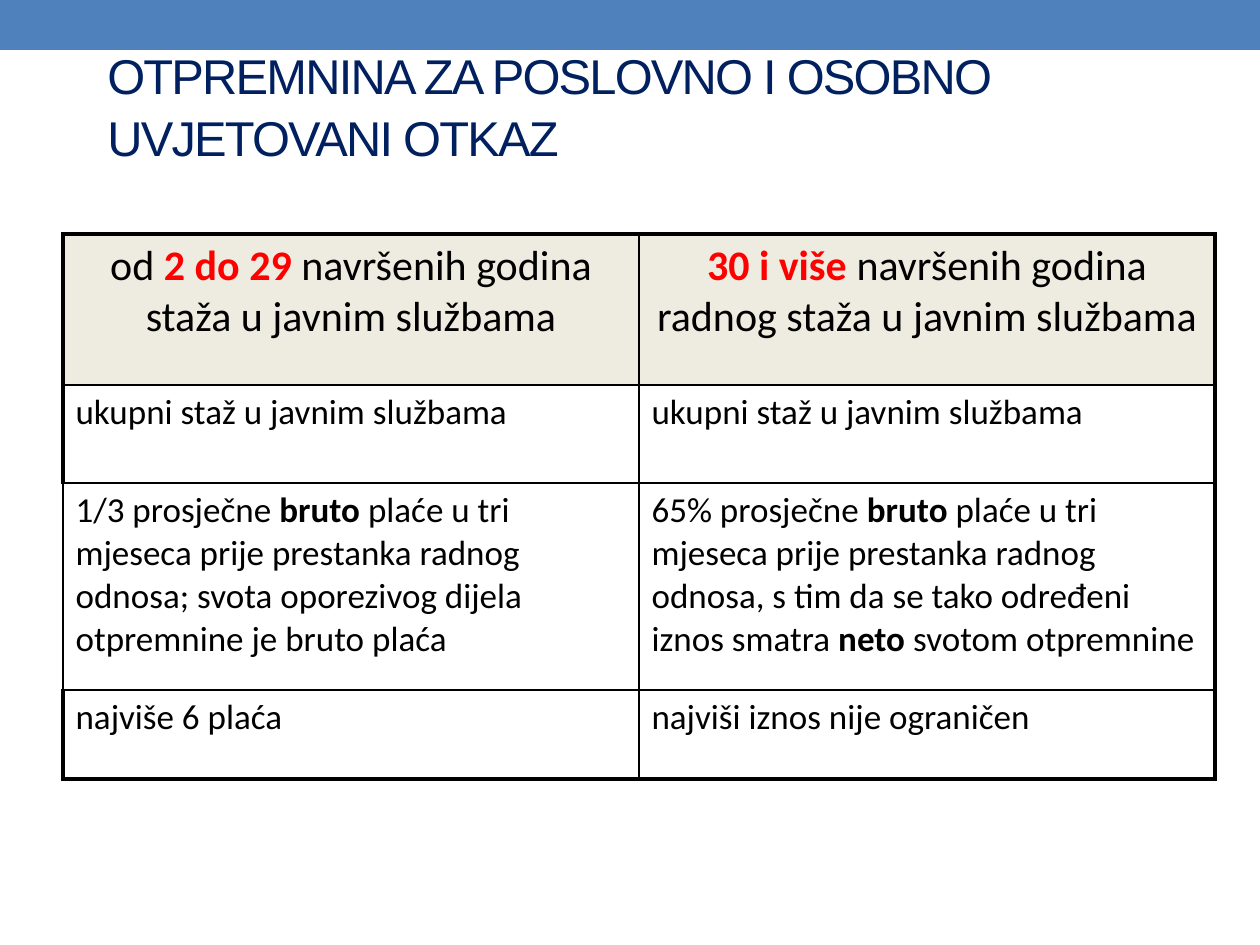
"""Build a slide with a title and a table comparing severance pay."""
import pptx
import pptx.dml.color
import pptx.enum.shapes
import pptx.enum.text
import pptx.oxml
import pptx.oxml.ns
import pptx.util

PX = 914400 // 126
BLACK, RED, NAVY, BLUE, BEIGE = "000000", "FF0000", "002060", "4F81BD", "EEECE1"
THIN, THICK = 1, 2.25
COLUMN_WIDTH = 576
ROW_HEIGHTS = [151, 98, 207, 89]
PLAIN, BOLD, ALERT = (False, BLACK), (True, BLACK), (True, RED)

ROWS = [
    [
        [("od ", PLAIN), ("2 do 29 ", ALERT),
         ("navršenih godina staža u javnim službama", PLAIN)],
        [("30 i više ", ALERT),
         ("navršenih godina radnog staža u javnim službama", PLAIN)],
    ],
    [[("ukupni staž u javnim službama", PLAIN)]] * 2,
    [
        [("1/3 prosječne ", PLAIN), ("bruto", BOLD),
         (" plaće u tri mjeseca prije prestanka radnog odnosa; "
          "svota oporezivog dijela otpremnine je bruto plaća", PLAIN)],
        [("65% prosječne ", PLAIN), ("bruto", BOLD),
         (" plaće u tri mjeseca prije prestanka radnog odnosa, "
          "s tim da se tako određeni iznos smatra ", PLAIN),
         ("neto ", BOLD), ("svotom otpremnine", PLAIN)],
    ],
    [[("najviše 6 plaća", PLAIN)], [("najviši iznos nije ograničen", PLAIN)]],
]


def px(n):
    return pptx.util.Emu(n * PX)


def color(value):
    return pptx.dml.color.RGBColor.from_string(value)


def add_run(p, text, size, font, hex_color, bold=False):
    r = p.add_run()
    r.text = text
    r.font.size = pptx.util.Pt(size)
    r.font.name = font
    r.font.bold = bold
    r.font.color.rgb = color(hex_color)
    return r


def add_bar(s):
    sp = s.shapes.add_shape(
        pptx.enum.shapes.MSO_SHAPE.RECTANGLE, 0, 0, px(1260), px(50))
    sp.shadow.inherit = False
    sp.fill.solid()
    sp.fill.fore_color.rgb = color(BLUE)
    sp.line.fill.background()


def add_title(s, text):
    tf = s.shapes.add_textbox(px(95), px(35), px(1071), px(139)).text_frame
    tf.word_wrap = True
    tf.vertical_anchor = pptx.enum.text.MSO_ANCHOR.MIDDLE
    p = tf.paragraphs[0]
    p.line_spacing = 1.05
    r = add_run(p, text, 27.9, "Arial", NAVY)
    r.font._element.set("spc", "-100")


def set_border(cell, side, width):
    cell._tc.get_or_add_tcPr().append(pptx.oxml.parse_xml(
        f'<a:ln{side} {pptx.oxml.ns.nsdecls("a")} w="{pptx.util.Pt(width)}">'
        f'<a:solidFill><a:srgbClr val="{BLACK}"/></a:solidFill></a:ln{side}>'))


def border_widths(row, col):
    last = len(ROWS) - 1
    return {
        "L": THICK if col == 0 and row != 2 else THIN,
        "R": THICK if col == 1 else THIN,
        "T": THICK if row == 0 else THIN,
        "B": THICK if row == last else THIN,
    }


def fill_cell(cell, runs, header):
    p = cell.text_frame.paragraphs[0]
    if header:
        p.alignment = pptx.enum.text.PP_ALIGN.CENTER
        cell.fill.solid()
        cell.fill.fore_color.rgb = color(BEIGE)
    else:
        cell.fill.background()
    for text, (bold, hex_color) in runs:
        add_run(p, text, 24 if header else 20, "Calibri", hex_color, bold)


def add_comparison_table(s):
    table = s.shapes.add_table(
        len(ROWS), 2, px(63), px(234),
        px(2 * COLUMN_WIDTH), px(sum(ROW_HEIGHTS))).table
    table.first_row = table.horz_banding = False
    for column in table.columns:
        column.width = px(COLUMN_WIDTH)
    for i, (height, row) in enumerate(zip(ROW_HEIGHTS, ROWS)):
        table.rows[i].height = px(height)
        for j, runs in enumerate(row):
            cell = table.cell(i, j)
            for side, width in border_widths(i, j).items():
                set_border(cell, side, width)
            fill_cell(cell, runs, header=i == 0)


def main():
    prs = pptx.Presentation()
    prs.slide_width, prs.slide_height = px(1260), px(945)
    s = prs.slides.add_slide(prs.slide_layouts[6])
    add_bar(s)
    add_title(s, "OTPREMNINA ZA POSLOVNO I OSOBNO UVJETOVANI OTKAZ")
    add_comparison_table(s)
    prs.save("out.pptx")


if __name__ == "__main__":
    main()
